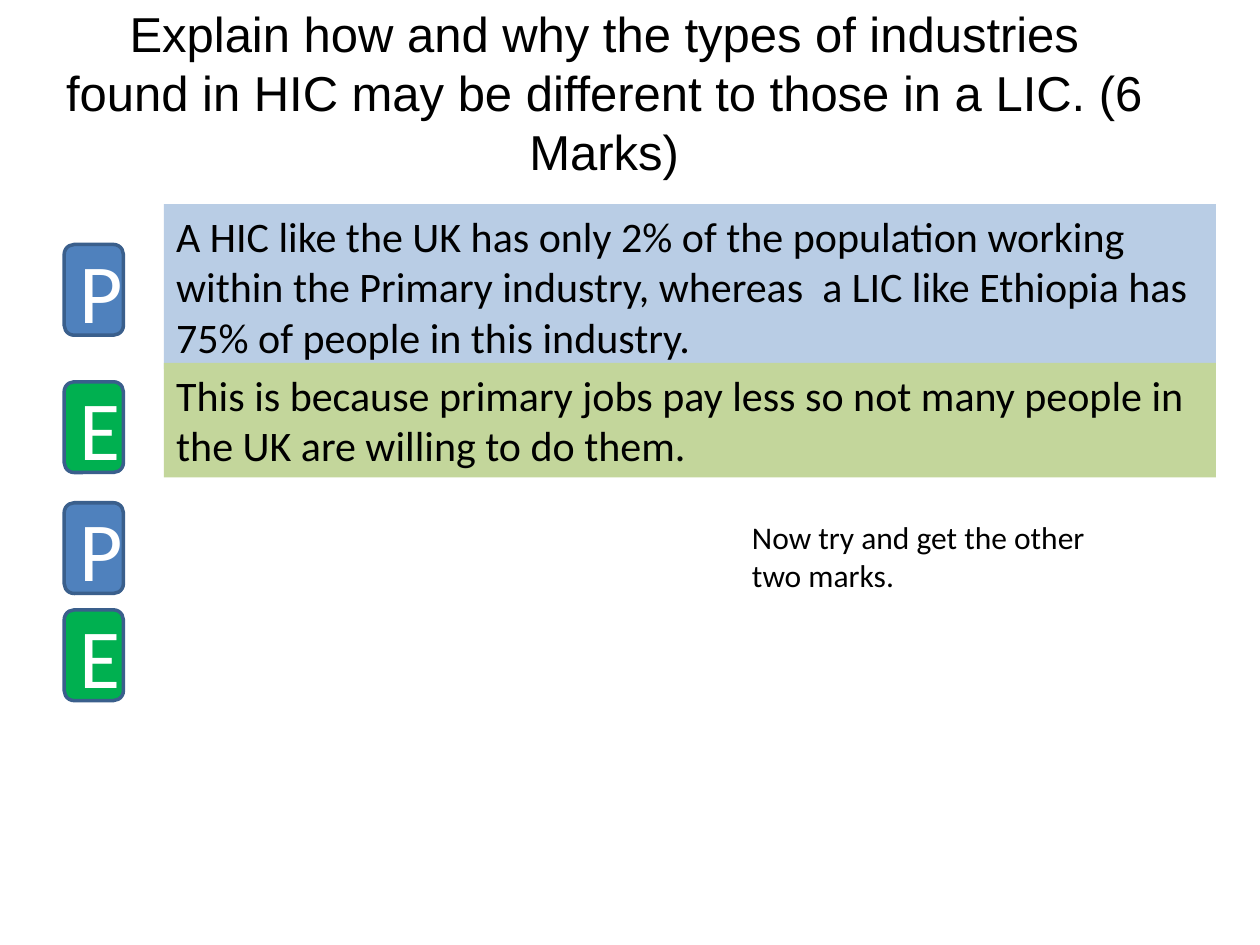
from pptx import Presentation
from pptx.dml.color import RGBColor
from pptx.enum.shapes import MSO_SHAPE
from pptx.enum.text import MSO_ANCHOR, MSO_AUTO_SIZE, PP_ALIGN
from pptx.util import Inches, Pt

COLOURS = {
    "black": "000000", "white": "FFFFFF", "outline": "3A5F8C",
    "point": "4F81BD", "explain": "00B050",
    "point answer": "B9CDE5", "explain answer": "C3D69B",
}

# Content
QUESTION = ("Explain how and why the types of industries\v"
            "found in HIC may be different to those in a LIC. (6 Marks)")
BADGES = [  # letter, colour, top
    ("P", "point", 1.94),
    ("E", "explain", 3.03),
    ("P", "point", 3.99),
    ("E", "explain", 4.84),
]
ANSWERS = [  # text, colour, top, height
    ("A HIC like the UK has only 2% of the population working within the "
     "Primary industry, whereas  a LIC like Ethiopia has 75% of people in "
     "this industry.", "point answer", 1.62, 1.31),
    ("This is because primary jobs pay less so not many people in the UK "
     "are willing to do them.", "explain answer", 2.88, 0.91),
]
PROMPT = "Now try and get the other two marks."


def colour(name):
    return RGBColor.from_string(COLOURS[name])


def write(shape, text, size, font="Calibri", ink="black",
          align=PP_ALIGN.LEFT, anchor=MSO_ANCHOR.TOP, grow=True):
    frame = shape.text_frame
    frame.text = text
    frame.word_wrap = True
    frame.vertical_anchor = anchor
    frame.auto_size = MSO_AUTO_SIZE.SHAPE_TO_FIT_TEXT if grow else MSO_AUTO_SIZE.NONE
    paragraph = frame.paragraphs[0]
    paragraph.alignment = align
    for run in paragraph.runs:
        run.font.size = Pt(size)
        run.font.name = font
        run.font.color.rgb = colour(ink)


def add_block(slide, kind, box, fill, outline=None):
    block = slide.shapes.add_shape(kind, *map(Inches, box))
    block.shadow.inherit = False
    block.fill.solid()
    block.fill.fore_color.rgb = colour(fill)
    if outline:
        block.line.color.rgb = colour(outline)
        block.line.width = Pt(2)
    else:
        block.line.fill.background()
    return block


def main():
    deck = Presentation()
    deck.slide_width, deck.slide_height = Inches(10), Inches(7.5)
    slide = deck.slides.add_slide(deck.slide_layouts[5])

    # Exam question
    question = slide.shapes.title
    question.left, question.top = Inches(0), Inches(0.21)
    question.width, question.height = Inches(9.59), Inches(1.04)
    write(question, QUESTION, 28, font="Arial",
          align=PP_ALIGN.CENTER, anchor=MSO_ANCHOR.MIDDLE)

    # Point and explain badges
    for letter, fill, top in BADGES:
        badge = add_block(slide, MSO_SHAPE.ROUNDED_RECTANGLE,
                          (0.51, top, 0.47, 0.72), fill, "outline")
        write(badge, letter, 48, ink="white", align=PP_ALIGN.CENTER,
              anchor=MSO_ANCHOR.MIDDLE, grow=False)

    # Model answers
    for text, fill, top, height in ANSWERS:
        answer = add_block(slide, MSO_SHAPE.RECTANGLE,
                           (1.3, top, 8.35, height), fill)
        write(answer, text, 24)

    # Prompt for the remaining marks
    prompt = slide.shapes.add_textbox(*map(Inches, (5.87, 4.06, 3.07, 0.71)))
    write(prompt, PROMPT, 18)

    deck.save("out.pptx")


if __name__ == "__main__":
    main()
